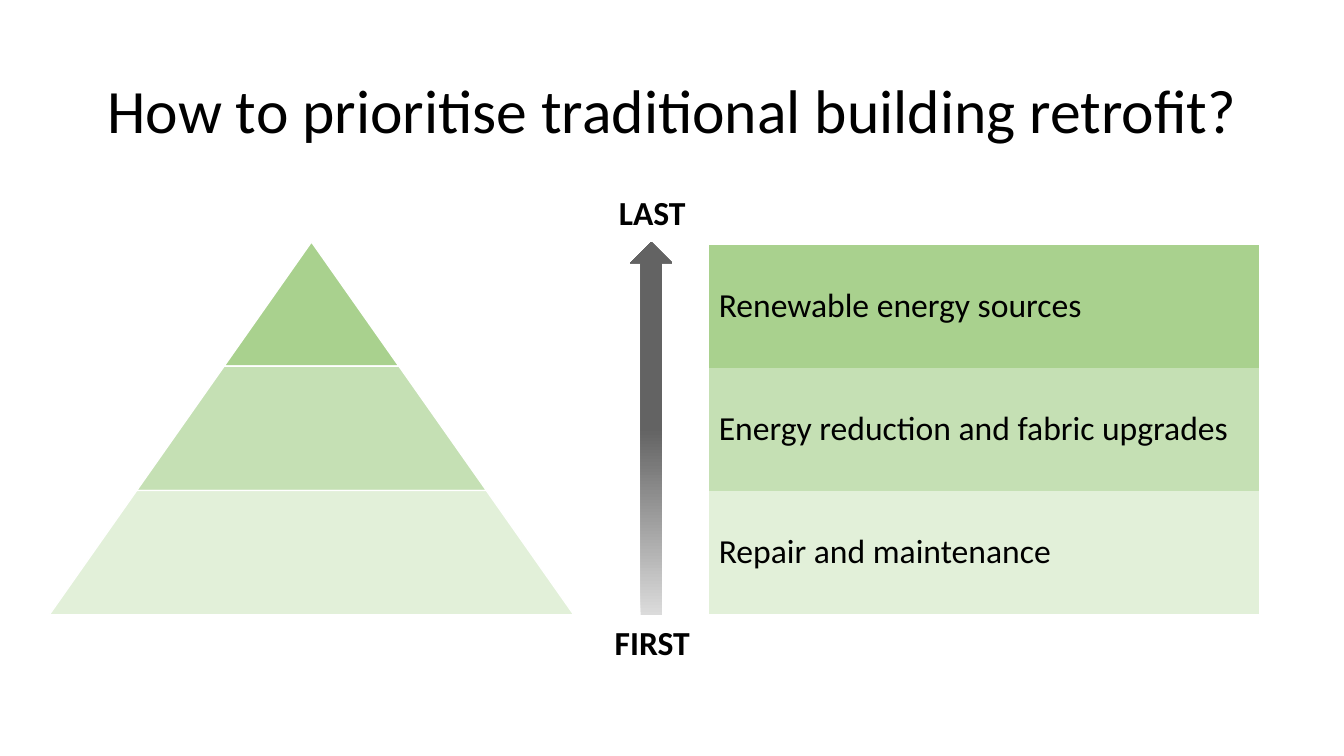
from pptx import Presentation
from pptx.dml.color import RGBColor
from pptx.enum.shapes import MSO_SHAPE
from pptx.enum.text import MSO_ANCHOR, PP_ALIGN
from pptx.util import Inches, Pt

BLACK = RGBColor(0x00, 0x00, 0x00)
WHITE = RGBColor(0xFF, 0xFF, 0xFF)
PALE = RGBColor(0xDB, 0xDB, 0xDB)
DARK = RGBColor(0x63, 0x63, 0x63)
TIERS = [
    ("Renewable energy sources", RGBColor(0xA9, 0xD1, 0x8E)),
    ("Energy reduction and fabric upgrades", RGBColor(0xC5, 0xE0, 0xB4)),
    ("Repair and maintenance", RGBColor(0xE2, 0xF0, 0xD9)),
]
PLAIN = "{2D5ABB26-0587-4C30-8999-92F81FD0307C}"


def write(frame, text, size=24, bold=False, align=PP_ALIGN.LEFT, gap=1.0):
    frame.word_wrap = True
    line = frame.paragraphs[0]
    line.alignment = align
    line.line_spacing = gap
    run = line.add_run()
    run.text = text
    run.font.name = "Calibri"
    run.font.size = Pt(size)
    run.font.bold = bold
    run.font.color.rgb = BLACK


deck = Presentation()
deck.slide_width = Inches(13.33)
deck.slide_height = Inches(7.5)
slide = deck.slides.add_slide(deck.slide_layouts[6])
shapes = slide.shapes

title = shapes.add_textbox(Inches(0.92), Inches(0.4), Inches(11.5), Inches(1.45))
title.text_frame.vertical_anchor = MSO_ANCHOR.MIDDLE
write(title.text_frame, "How to prioritise traditional building retrofit?",
      size=44, align=PP_ALIGN.CENTER, gap=0.9)

top, tall, mid, step = 2.4, 1.233, 3.09, 1.734
group = shapes.add_group_shape()
for i, (text, color) in enumerate(TIERS):
    wide = step * (i + 1)
    tier = group.shapes.add_shape(
        MSO_SHAPE.TRAPEZOID, Inches(mid - wide / 2), Inches(top + i * tall),
        Inches(wide), Inches(tall))
    tier.adjustments[0] = step / 2 / tall
    tier.shadow.inherit = False
    tier.fill.solid()
    tier.fill.fore_color.rgb = color
    tier.line.color.rgb = WHITE
    tier.line.width = Pt(1)

rows, high = 8, 0.61
holder = shapes.add_table(rows, 2, Inches(5.91), Inches(1.82),
                          Inches(6.58), Inches(rows * high))
table = holder.table
table._tbl.tblPr.find("{*}tableStyleId").text = PLAIN
table.first_row = table.horz_banding = False
for col, wide in zip(table.columns, (1.12, 5.46)):
    col.width = Inches(wide)
for row in table.rows:
    row.height = Inches(high)
    for cell in row.cells:
        cell.vertical_anchor = MSO_ANCHOR.MIDDLE
        cell.fill.background()

for i, text in ((0, "LAST"), (rows - 1, "FIRST")):
    write(table.cell(i, 0).text_frame, text, bold=True, align=PP_ALIGN.CENTER)
for i, (text, color) in enumerate(TIERS):
    cell = table.cell(2 * i + 1, 1)
    cell.merge(table.cell(2 * i + 2, 1))
    cell.fill.solid()
    cell.fill.fore_color.rgb = color
    write(cell.text_frame, text)

arrow = shapes.add_shape(MSO_SHAPE.UP_ARROW, Inches(6.25), Inches(top),
                         Inches(0.42), Inches(3 * tall))
arrow.shadow.inherit = False
arrow.line.fill.background()
arrow.fill.gradient()
arrow.fill.gradient_angle = 90
for stop, color, share in zip(arrow.fill.gradient_stops, (PALE, DARK), (0, 0.5)):
    stop.color.rgb = color
    stop.position = share

deck.save("out.pptx")
